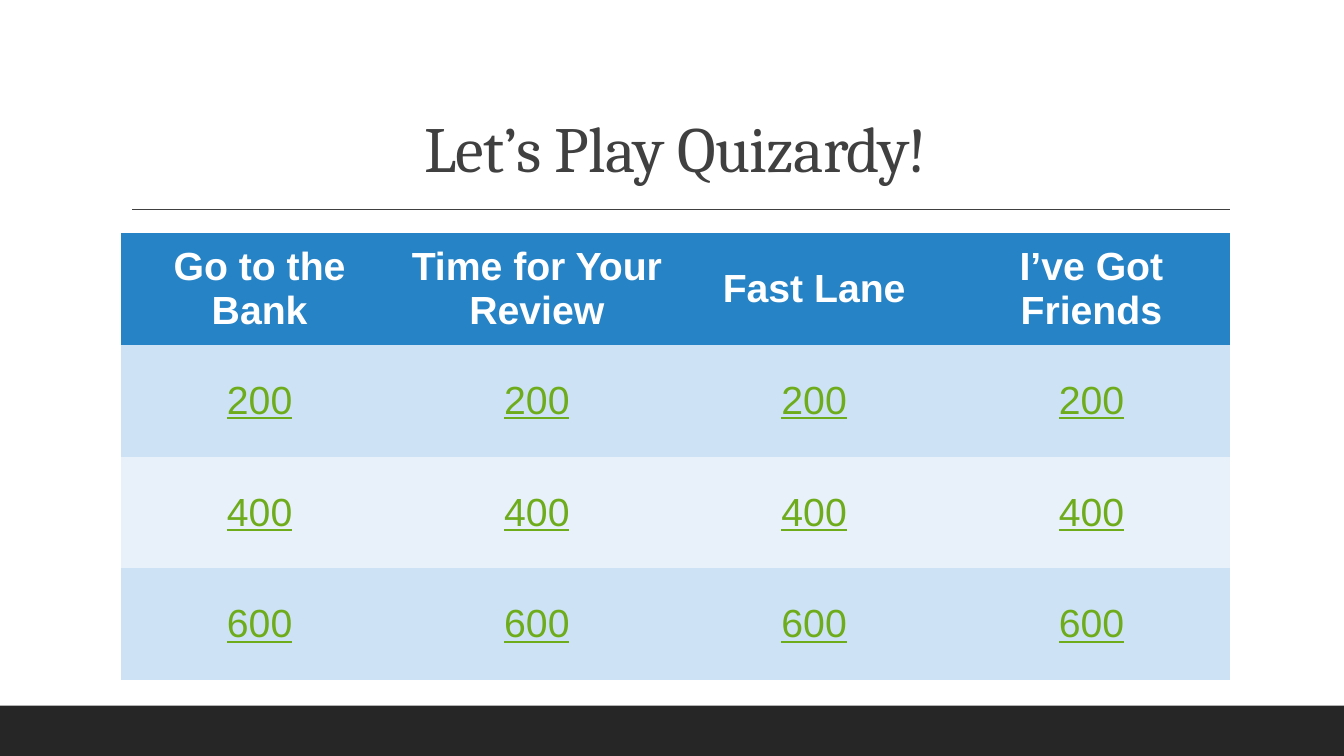
import pptx
import pptx.util
import pptx.dml.color
import pptx.enum.shapes
import pptx.enum.text
import pptx.oxml.ns
from lxml import etree

Inches, Pt = pptx.util.Inches, pptx.util.Pt
MIDDLE = pptx.enum.text.MSO_ANCHOR.MIDDLE
CENTER = pptx.enum.text.PP_ALIGN.CENTER
NO_STYLE = "{2D5ABB26-0587-4C30-8999-92F81FD0307C}"
W, H = 13.33, 7.5
DARK, BAND = "404040", "262626"
HEAD_FILL, ROW_FILLS, SCORE = "2683C6", ("CDE3F5", "E8F1FA"), "6EAC1C"

CATEGORIES = ["Go to the Bank", "Time for Your Review", "Fast Lane", "I’ve Got Friends"]
SCORES = [200, 400, 600]


def rgb(hex_color):
    return pptx.dml.color.RGBColor.from_string(hex_color)


def style(p, name, size, color, bold=False, underline=False):
    p.alignment = CENTER
    f = p.font
    f.name, f.size, f.bold, f.underline = name, Pt(size), bold, underline
    f.color.rgb = rgb(color)


def add_footer_band(s, x, y, w, h):
    sp = s.shapes.add_shape(pptx.enum.shapes.MSO_SHAPE.RECTANGLE,
                            Inches(x), Inches(y), Inches(w), Inches(h))
    sp.shadow.inherit = False
    sp.fill.solid()
    sp.fill.fore_color.rgb = rgb(BAND)
    sp.line.fill.background()


def add_title(s, text, x, y, w, h):
    sp = s.shapes.add_textbox(Inches(x), Inches(y), Inches(w), Inches(h))
    tf = sp.text_frame
    tf.word_wrap = True
    tf.vertical_anchor = pptx.enum.text.MSO_ANCHOR.BOTTOM
    p = tf.paragraphs[0]
    r = p.add_run()
    r.text = text
    style(p, "Cambria", 46, DARK)
    p.line_spacing = 0.9
    r.font._element.set("spc", "-50")  # tightened letters

    # Rule under the title, ending flush with the box
    inset, gap = 0.01 * w, 0.18
    line = s.shapes.add_connector(pptx.enum.shapes.MSO_CONNECTOR.STRAIGHT,
                                  Inches(x + inset), Inches(y + h + gap),
                                  Inches(x + w), Inches(y + h + gap))
    line.line.color.rgb = rgb(DARK)
    line.line.width = Pt(1)
    etree.SubElement(line._element.spPr, pptx.oxml.ns.qn("a:effectLst"))


def add_board(s, categories, scores, x, y, w, h):
    rows = [categories] + [[str(score)] * len(categories) for score in scores]
    table = s.shapes.add_table(len(rows), len(categories), Inches(x), Inches(y),
                               Inches(w), Inches(h)).table
    table._tbl.tblPr.find(pptx.oxml.ns.qn("a:tableStyleId")).text = NO_STYLE
    for i, row in enumerate(rows):
        head = i == 0
        for j, text in enumerate(row):
            cell = table.cell(i, j)
            cell.text = text
            cell.vertical_anchor = MIDDLE
            cell.fill.solid()
            cell.fill.fore_color.rgb = rgb(HEAD_FILL if head else ROW_FILLS[(i - 1) % 2])
            style(cell.text_frame.paragraphs[0], "Arial", 28,
                  "FFFFFF" if head else SCORE, bold=head, underline=not head)


def main():
    prs = pptx.Presentation()
    prs.slide_width, prs.slide_height = Inches(W), Inches(H)
    s = prs.slides.add_slide(prs.slide_layouts[6])
    left, width = 0.09 * W, 11
    add_footer_band(s, 0, H - 0.5, W, 0.5)
    add_title(s, "Let’s Play Quizardy!", left, 0.31, width, 1.59)
    add_board(s, CATEGORIES, SCORES, left, 2.31, width, 4.44)
    prs.save("out.pptx")


if __name__ == "__main__":
    main()
